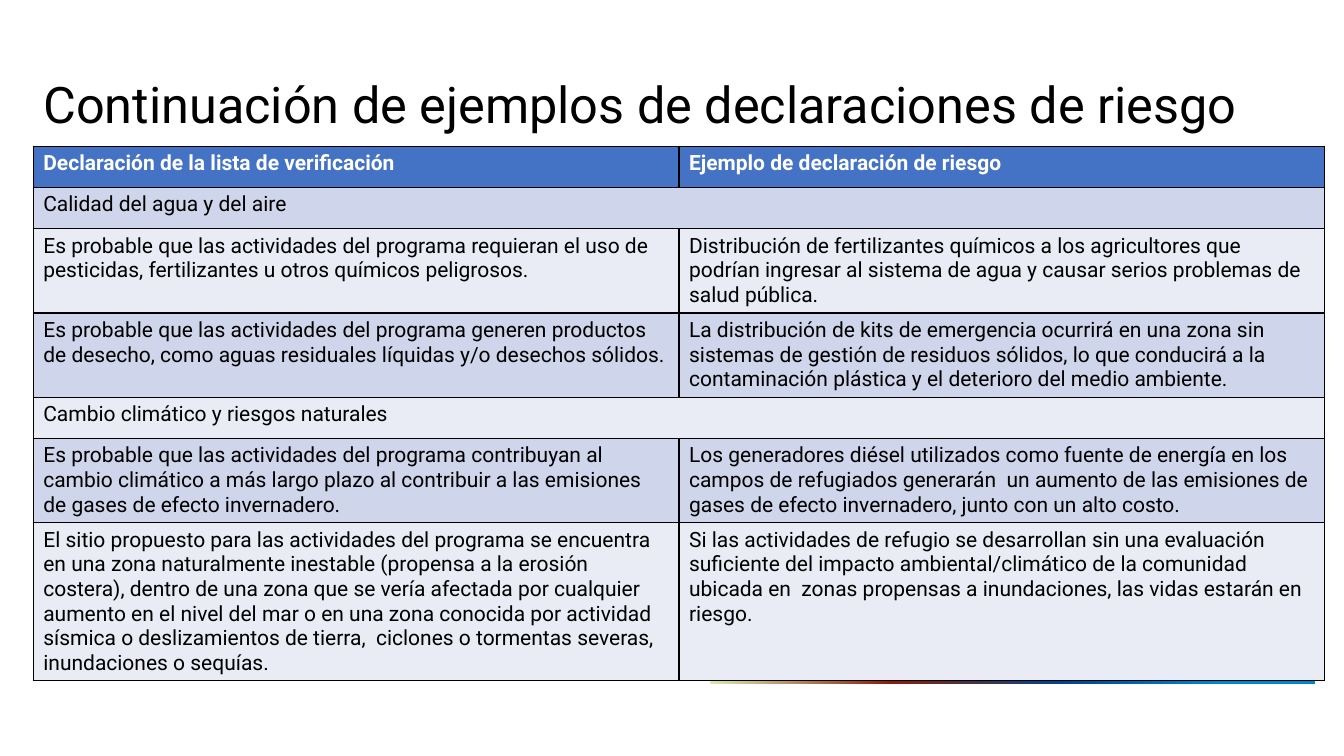
from copy import deepcopy
from dataclasses import dataclass

from lxml.etree import SubElement as Sub
from pptx import Presentation as Deck
from pptx.dml.color import RGBColor as Rgb
from pptx.enum.shapes import MSO_SHAPE as Kind
from pptx.enum.text import MSO_ANCHOR as Anchor, MSO_AUTO_SIZE as Fit
from pptx.oxml.ns import qn
from pptx.util import Pt

PX = 9144
FONT = "Roboto"
BLACK, WHITE = "000000", "FFFFFF"
HEAD, DARK, LIGHT = "4472C4", "CFD5EA", "E9EBF5"
LEFT, TOP, WIDE = 33, 145, 1281


@dataclass
class Row:
    high: int
    texts: list[str]


@dataclass
class Stop:
    place: int
    shade: str


ROWS = [
    Row(41, ["Declaración de la lista de verificación", "Ejemplo de declaración de riesgo"]),
    Row(41, ["Calidad del agua y del aire"]),
    Row(83, [
        "Es probable que las actividades del programa requieran el uso de pesticidas, "
        "fertilizantes u otros químicos peligrosos.",
        "Distribución de fertilizantes químicos a los agricultores que  podrían ingresar "
        "al sistema de agua y causar serios problemas de salud pública.",
    ]),
    Row(83, [
        "Es probable que las actividades del programa generen productos de desecho, "
        "como aguas residuales líquidas y/o desechos sólidos.",
        "La distribución de kits de emergencia ocurrirá en una zona sin sistemas de gestión "
        "de residuos sólidos, lo que conducirá a la contaminación plástica y el deterioro "
        "del medio ambiente.",
    ]),
    Row(41, ["Cambio climático y riesgos naturales"]),
    Row(83, [
        "Es probable que las actividades del programa contribuyan al cambio climático a más "
        "largo plazo al contribuir a las emisiones de gases de efecto invernadero.",
        "Los generadores diésel utilizados como fuente de energía en los campos de refugiados "
        "generarán  un aumento de las emisiones de gases de efecto invernadero, junto con "
        "un alto costo.",
    ]),
    Row(157, [
        "El sitio propuesto para las actividades del programa se encuentra en una zona "
        "naturalmente inestable (propensa a la erosión costera), dentro de una zona que se "
        "vería afectada por cualquier aumento en el nivel del mar o en una zona conocida por "
        "actividad sísmica o deslizamientos de tierra,  ciclones o tormentas severas, "
        "inundaciones o sequías.",
        "Si las actividades de refugio se desarrollan sin una evaluación suficiente del "
        "impacto ambiental/climático de la comunidad ubicada en  zonas propensas a "
        "inundaciones, las vidas estarán en riesgo.",
    ]),
]

STOPS = [Stop(0, "DBE9AA"), Stop(30, "8A1D06"), Stop(58, "00448B"), Stop(84, "0084CC")]


def tint(code: str) -> Rgb:
    return Rgb.from_string(code)


def write(frame, text: str, *, size: int, shade: str = BLACK,
          bold: bool = False, space: float = 1.0) -> None:
    line = frame.paragraphs[0]
    line.line_spacing = space
    run = line.add_run()
    run.text = text
    font = run.font
    font.name, font.size, font.bold = FONT, Pt(size), bold
    font.color.rgb = tint(shade)


def edge(cell) -> None:
    props = cell._tc.get_or_add_tcPr()
    for side in ("lnL", "lnR", "lnT", "lnB"):
        line = Sub(props, qn(f"a:{side}"), w=str(Pt(1)))
        fill = Sub(line, qn("a:solidFill"))
        Sub(fill, qn("a:srgbClr"), val=BLACK)


def draw_bar(slide) -> None:
    bar = slide.shapes.add_shape(Kind.RECTANGLE, 704 * PX, 671 * PX, 600 * PX, 8 * PX)
    bar.shadow.inherit = False
    bar.line.fill.background()
    bar.fill.gradient()
    bar.fill.gradient_angle = 0
    group = bar._element.spPr.find(".//" + qn("a:gsLst"))
    while len(group) < len(STOPS):
        group.append(deepcopy(group[-1]))
    for mark, stop in zip(bar.fill.gradient_stops, STOPS):
        mark.position = stop.place / 100
        mark.color.rgb = tint(stop.shade)


def draw_title(slide) -> None:
    title = slide.shapes.title
    title.left, title.top = LEFT * PX, 34 * PX
    title.width, title.height = WIDE * PX, 145 * PX
    frame = title.text_frame
    frame.word_wrap = True
    frame.auto_size = Fit.NONE
    frame.vertical_anchor = Anchor.MIDDLE
    write(frame, "Continuación de ejemplos de declaraciones de riesgo", size=36, space=0.9)
    frame.paragraphs[0].alignment = 1


def draw_table(slide) -> None:
    high = sum(row.high for row in ROWS)
    grid = slide.shapes.add_table(
        len(ROWS), 2, LEFT * PX, TOP * PX, WIDE * PX, high * PX).table
    for spot, row in enumerate(ROWS):
        grid.rows[spot].height = row.high * PX
        first = spot == 0
        back = HEAD if first else DARK if spot % 2 else LIGHT
        cells = [grid.cell(spot, col) for col in range(2)]
        for cell in cells:
            edge(cell)
            cell.fill.solid()
            cell.fill.fore_color.rgb = tint(back)
        if len(row.texts) == 1:
            cells[0].merge(cells[1])
        for cell, text in zip(cells, row.texts):
            write(cell.text_frame, text, size=15, shade=WHITE if first else BLACK, bold=first)


def main() -> None:
    deck = Deck()
    deck.slide_width, deck.slide_height = 1333 * PX, 750 * PX
    slide = deck.slides.add_slide(deck.slide_layouts[5])
    draw_bar(slide)
    draw_title(slide)
    draw_table(slide)
    deck.save("out.pptx")


if __name__ == "__main__":
    main()
